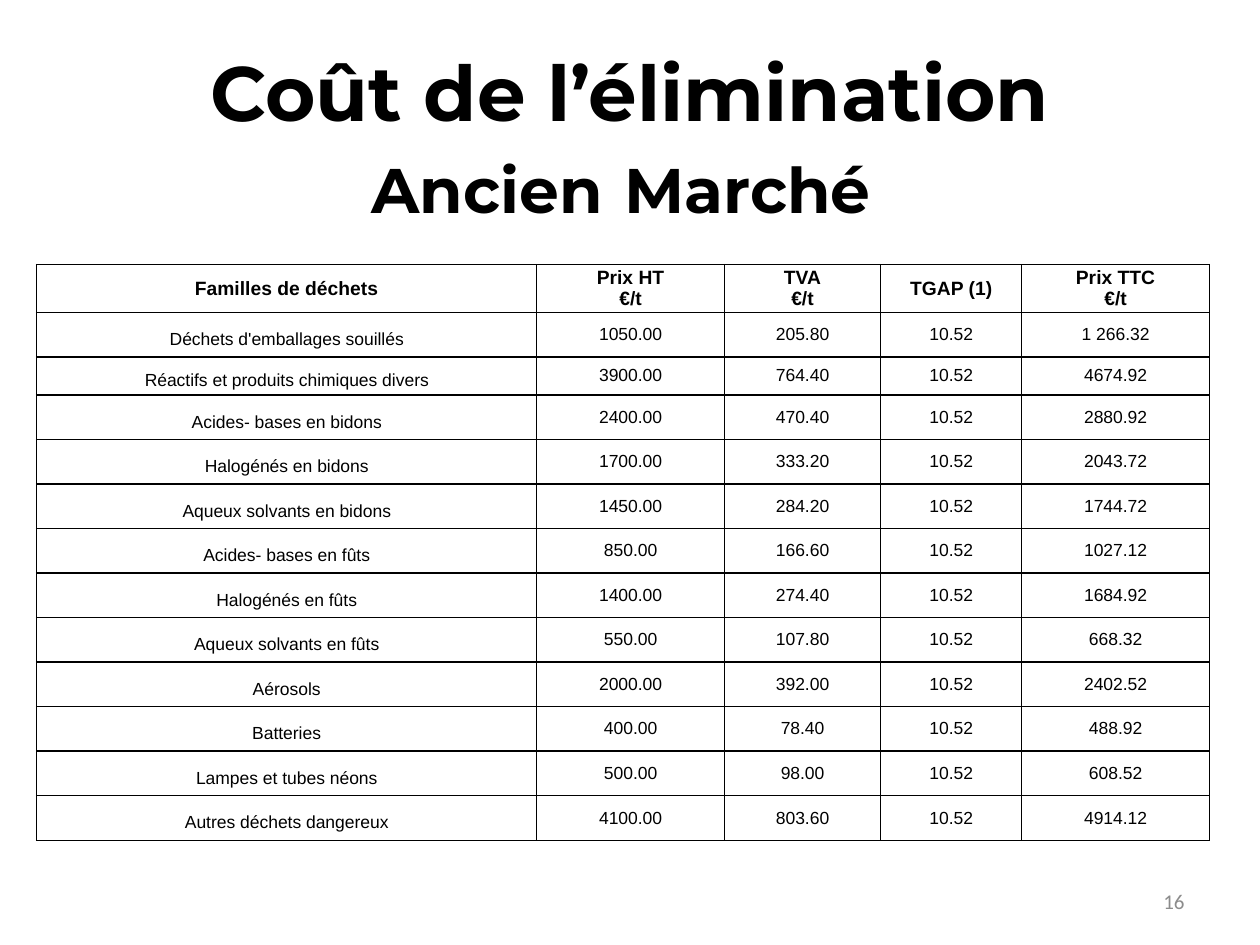
import lxml.etree
import pptx
import pptx.dml.color
import pptx.enum.text
import pptx.oxml.ns
import pptx.util

Inches = pptx.util.Inches
PP_ALIGN = pptx.enum.text.PP_ALIGN
MSO_ANCHOR = pptx.enum.text.MSO_ANCHOR

BLACK = "000000"
GREY = "8C8C8C"
TITLE_RUNS = [("Coût de l’élimination\v", 44), ("Ancien", 36), (" ", 44), ("Marché ", 36)]
HEADINGS = ["Familles de déchets", "Prix HT\n€/t", "TVA\n€/t", "TGAP (1)", "Prix TTC\n€/t"]
TGAP = "10.52"
# Waste family, price before tax, VAT, price with all taxes
COSTS = [
    ("Déchets d'emballages souillés", "1050.00", "205.80", "1 266.32"),
    ("Réactifs et produits chimiques divers", "3900.00", "764.40", "4674.92"),
    ("Acides- bases en bidons", "2400.00", "470.40", "2880.92"),
    ("Halogénés en bidons", "1700.00", "333.20", "2043.72"),
    ("Aqueux solvants en bidons", "1450.00", "284.20", "1744.72"),
    ("Acides- bases en fûts", "850.00", "166.60", "1027.12"),
    ("Halogénés en fûts", "1400.00", "274.40", "1684.92"),
    ("Aqueux solvants en fûts", "550.00", "107.80", "668.32"),
    ("Aérosols", "2000.00", "392.00", "2402.52"),
    ("Batteries", "400.00", "78.40", "488.92"),
    ("Lampes et tubes néons", "500.00", "98.00", "608.52"),
    ("Autres déchets dangereux", "4100.00", "803.60", "4914.12"),
]
COLUMN_WIDTHS = [3.97, 1.49, 1.24, 1.12, 1.49]
TABLE_HEIGHT = 4.57
HEADING_HEIGHT = 0.38
REAGENTS_ROW, REAGENTS_HEIGHT = 2, 0.3


def rgb(hex_color):
    return pptx.dml.color.RGBColor.from_string(hex_color)


def format_font(font, name, size, color, bold=False):
    font.name = name
    font.size = pptx.util.Pt(size)
    font.color.rgb = rgb(color)
    font.bold = bold


def add_title(slide):
    title = slide.shapes.title
    title.left, title.top = Inches(0.5), Inches(0.3)
    title.width, title.height = Inches(9), Inches(1.25)
    frame = title.text_frame
    frame.auto_size = pptx.enum.text.MSO_AUTO_SIZE.NONE
    frame.vertical_anchor = MSO_ANCHOR.TOP
    heading = frame.paragraphs[0]
    heading.alignment = PP_ALIGN.CENTER
    for words, size in TITLE_RUNS:
        run = heading.add_run()
        run.text = words.rstrip("\v")
        format_font(run.font, "Montserrat", size, BLACK, bold=True)
        if words.endswith("\v"):
            heading.add_line_break()


def set_borders(cell, color, width):
    qn = pptx.oxml.ns.qn
    properties = cell._tc.get_or_add_tcPr()
    for position, side in enumerate(["lnL", "lnR", "lnT", "lnB"]):
        border = lxml.etree.Element(qn("a:" + side), w=str(pptx.util.Pt(width)))
        fill = lxml.etree.SubElement(border, qn("a:solidFill"))
        lxml.etree.SubElement(fill, qn("a:srgbClr"), val=color)
        properties.insert(position, border)


def fill_cell(cell, words, size, bold, line_spacing):
    cell.text_frame.text = words
    cell.fill.background()
    cell.vertical_anchor = MSO_ANCHOR.MIDDLE
    cell.margin_left = cell.margin_right = Inches(0.03)
    cell.margin_top = cell.margin_bottom = 0
    for paragraph in cell.text_frame.paragraphs:
        paragraph.alignment = PP_ALIGN.CENTER
        paragraph.line_spacing = line_spacing
        for run in paragraph.runs:
            format_font(run.font, "Arial", size, BLACK, bold)
    set_borders(cell, BLACK, 1)


def add_cost_table(slide):
    rows = [HEADINGS] + [(family, net, vat, TGAP, gross) for family, net, vat, gross in COSTS]
    table = slide.shapes.add_table(
        len(rows), len(HEADINGS), Inches(0.29), Inches(2.1),
        Inches(sum(COLUMN_WIDTHS)), Inches(TABLE_HEIGHT)).table
    table.first_row = table.horz_banding = False
    for column, width in zip(table.columns, COLUMN_WIDTHS):
        column.width = Inches(width)

    special_heights = {0: HEADING_HEIGHT, REAGENTS_ROW: REAGENTS_HEIGHT}
    common_height = ((TABLE_HEIGHT - sum(special_heights.values()))
                     / (len(rows) - len(special_heights)))
    for r, values in enumerate(rows):
        table.rows[r].height = Inches(special_heights.get(r, common_height))
        is_heading = r == 0
        for c, words in enumerate(values):
            is_family = c == 0 and not is_heading
            fill_cell(table.cell(r, c), words, 11 if is_heading else 10,
                      is_heading, 1.5 if is_family else 1.0)


def add_page_number(slide, number):
    box = slide.shapes.add_textbox(Inches(7.17), Inches(6.95), Inches(2.33), Inches(0.4))
    frame = box.text_frame
    frame.word_wrap = True
    frame.vertical_anchor = MSO_ANCHOR.MIDDLE
    frame.text = number
    frame.paragraphs[0].alignment = PP_ALIGN.RIGHT
    format_font(frame.paragraphs[0].runs[0].font, "Calibri", 12, GREY)


def main():
    presentation = pptx.Presentation()
    presentation.slide_width = Inches(10)
    presentation.slide_height = Inches(7.5)
    title_only = presentation.slide_layouts[5]
    slide = presentation.slides.add_slide(title_only)
    add_title(slide)
    add_cost_table(slide)
    add_page_number(slide, "16")
    presentation.save("out.pptx")


if __name__ == "__main__":
    main()
